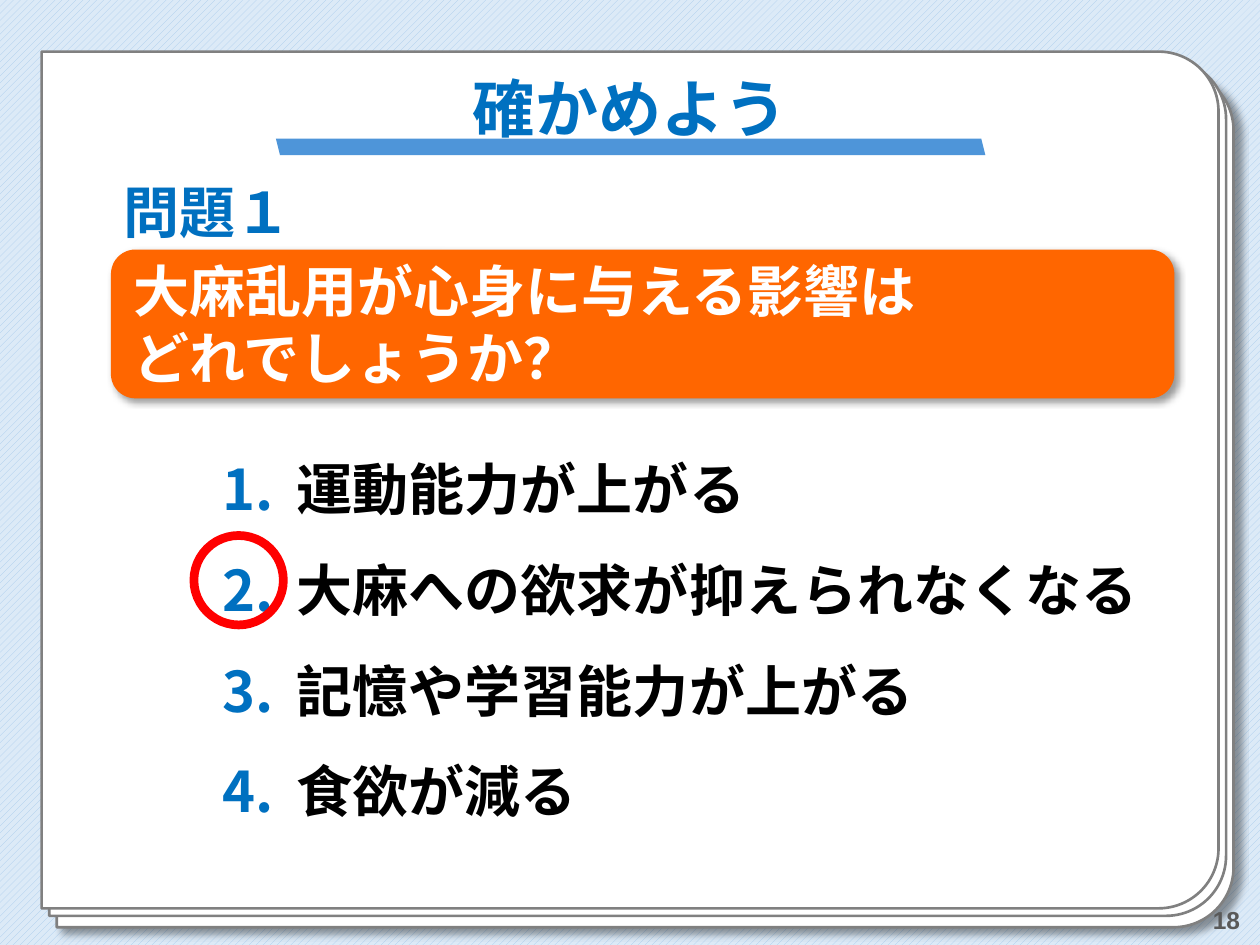
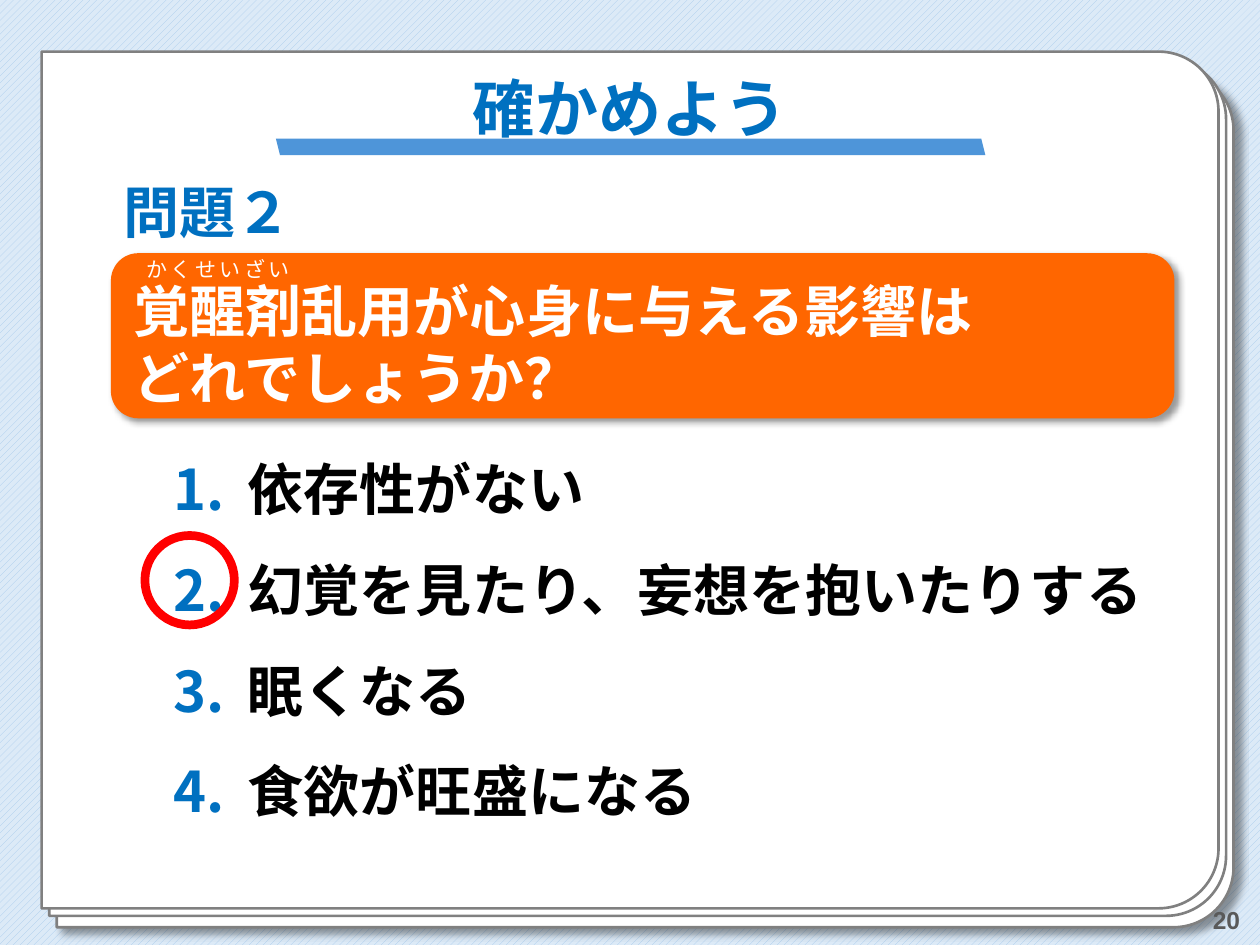
from lxml import etree
from pptx import Presentation
from pptx.dml.color import RGBColor
from pptx.enum import dml, shapes, text
from pptx.oxml import ns
from pptx.util import Pt

HUE = {"blue": "0070C0", "rule": "4E95D9", "orange": "FF6600", "red": "FF0000",
       "white": "FFFFFF", "black": "000000", "edge": "808080", "page": "595959",
       "stripe": "A6CAEC", "sky": "DCEAF7"}
LATIN, CJK = "Arial", "Noto Sans CJK JP"
KIND, ALIGN, ANCHOR = shapes.MSO_SHAPE, text.PP_ALIGN, text.MSO_ANCHOR
PITCH = 57.7  # height of one answer line

QUIZ = [
    dict(page="18", label="問題１", ask="大麻乱用が心身に与える影響は\nどれでしょうか？",
         banner=(63.4, 142.6, 607.7, 85), pad=0, indent=98.6, right=7.2, key=2,
         answers=["運動能力が上がる", "大麻への欲求が抑えられなくなる",
                  "記憶や学習能力が上がる", "食欲が減る"]),
    dict(page="20", label="問題２", ask="覚醒剤乱用が心身に与える影響は\nどれでしょうか？",
         banner=(63.4, 144.7, 607.7, 94.3), pad=8.6, indent=70.6, right=0, key=2,
         ruby="かくせいざい",
         answers=["依存性がない", "幻覚を見たり、妄想を抱いたりする",
                  "眠くなる", "食欲が旺盛になる"]),
]


def rgb(name):
    return RGBColor.from_string(HUE[name])


def add(parent, tag, **attrs):
    return etree.SubElement(parent, ns.qn(tag), attrs)


def shape(slide, kind, box, fill=None, line=None, width=1.5):
    item = slide.shapes.add_shape(kind, *map(Pt, box))
    item.shadow.inherit = False
    if fill:
        item.fill.solid()
        item.fill.fore_color.rgb = rgb(fill)
    else:
        item.fill.background()
    if line:
        item.line.color.rgb = rgb(line)
        item.line.width = Pt(width)
    else:
        item.line.fill.background()
    return item


def shade(item, dist):
    """Cast a soft shadow to the lower right."""
    effects = item._element.spPr.find(ns.qn("a:effectLst"))
    cast = add(effects, "a:outerShdw", blurRad=str(Pt(4)), dist=str(Pt(dist)),
               dir="2700000", algn="tl", rotWithShape="0")
    tint = add(cast, "a:srgbClr", val=HUE["black"])
    add(tint, "a:alpha", val="40000")


def style(para, size, color, bold=True, face=LATIN, align=ALIGN.LEFT, lead=None):
    para.alignment = align
    if lead:
        para.line_spacing = lead
    font = para.font
    font.size, font.bold, font.name = Pt(size), bold, face
    font.color.rgb = rgb(color)


def frame(item, insets=(7.2, 3.6, 7.2, 3.6), anchor=ANCHOR.TOP, wrap=True):
    body = item.text_frame
    body.word_wrap, body.vertical_anchor = wrap, anchor
    (body.margin_left, body.margin_top,
     body.margin_right, body.margin_bottom) = map(Pt, insets)
    return body


def write(slide, box, words, size, color, anchor=ANCHOR.TOP, wrap=True, **look):
    body = frame(slide.shapes.add_textbox(*map(Pt, box)), anchor=anchor, wrap=wrap)
    para = body.paragraphs[0]
    para.text = words
    style(para, size, color, **look)
    return para


def stack(slide, box):
    """Three sheets of paper, the front one filling the box."""
    left, top, wide, high = box
    for step, drop in ((8.6, 10.8), (4.3, 4.3), (0, 0)):
        x = left + step + (wide - high) / 2
        y = top + drop - (wide - high) / 2
        sheet = shape(slide, KIND.ROUND_2_SAME_RECTANGLE, (x, y, high, wide),
                      "white", "edge")
        sheet.rotation = 90
        sheet.adjustments[0], sheet.adjustments[1] = 0.07, 0
        if step == 8.6:
            shade(sheet, 5)


def base(slide, page):
    fill = slide.background.fill
    fill.patterned()
    fill.pattern = dml.MSO_PATTERN.WIDE_UPWARD_DIAGONAL
    fill.fore_color.rgb, fill.back_color.rgb = rgb("stripe"), rgb("sky")
    stack(slide, (23.8, 29.5, 672.5, 489.6))
    write(slide, (553.7, 511.2, 162, 28.8), page, 14, "page",
          anchor=ANCHOR.MIDDLE, align=ALIGN.RIGHT)


def head(slide, box):
    left, top, wide, high = box
    write(slide, box, "確かめよう", 36, "blue", anchor=ANCHOR.MIDDLE,
          align=ALIGN.CENTER, lead=0.9)
    rule = shape(slide, KIND.PARALLELOGRAM,
                 (left + 108.7, top + 54, 405.4, 9.4), "rule")
    rule._element.spPr.find(ns.qn("a:xfrm")).set("flipH", "1")


def banner(slide, box, ask, pad, ruby):
    left, top = box[:2]
    item = shape(slide, KIND.ROUNDED_RECTANGLE, box, "orange")
    item.adjustments[0] = 0.165
    shade(item, 3)
    para = frame(item, (8.6, pad, 8.6, 0)).paragraphs[0]
    para.text = ask
    style(para, 32, "white")
    if ruby:
        para = write(slide, (left + 11.5, top - 1.4, 99.4, 21.6), ruby, 12, "white",
                     wrap=False, bold=False, align=ALIGN.CENTER)
        para._p.pPr.get_or_add_defRPr().set("spc", "200")


def choices(slide, box, answers, indent, right, key):
    """Numbered answers, with a ring round the right one."""
    left, top = box[:2]
    body = frame(slide.shapes.add_textbox(*map(Pt, box)), (7.2, 11.5, right, 3.6))
    for i, words in enumerate(answers):
        para = body.add_paragraph() if i else body.paragraphs[0]
        para.text = words
        para.line_spacing = 1.5
        props = para._p.get_or_add_pPr()
        props.set("marL", str(Pt(indent)))
        props.set("indent", str(Pt(-42.5)))
        add(add(props, "a:buClr"), "a:srgbClr", val=HUE["blue"])
        add(props, "a:buAutoNum", type="arabicPeriod")
        style(para, 32, "black")
    shape(slide, KIND.OVAL, (left + indent - 51.8, top + 19.3 + PITCH * (key - 1),
                             51.1, 51.1), line="red", width=5)


def build(deck, quiz):
    slide = deck.slides.add_slide(deck.slide_layouts[6])
    base(slide, quiz["page"])
    head(slide, (49, 25.2, 622, 77.8))
    banner(slide, quiz["banner"], quiz["ask"], quiz["pad"], quiz.get("ruby"))
    write(slide, (63.4, 101.5, 111.6, 42.5), quiz["label"], 32, "blue",
          anchor=ANCHOR.BOTTOM, wrap=False, face=CJK, lead=0.9)
    choices(slide, (64, 229, 607.7, 242), quiz["answers"], quiz["indent"],
            quiz["right"], quiz["key"])


def main():
    deck = Presentation()
    deck.slide_width, deck.slide_height = Pt(720), Pt(540)
    for quiz in QUIZ:
        build(deck, quiz)
    deck.save("out.pptx")


if __name__ == "__main__":
    main()
